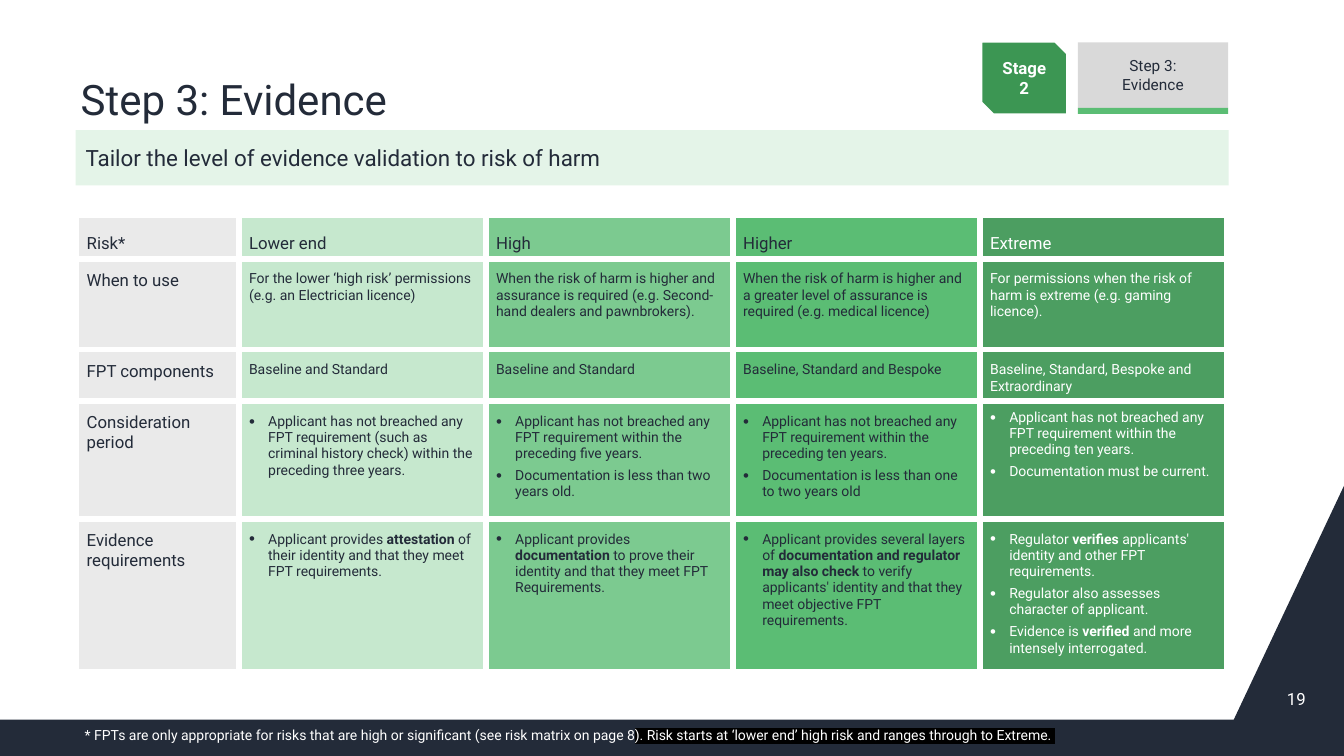
from lxml.etree import SubElement
from pptx import Presentation
from pptx.dml.color import RGBColor
from pptx.enum.shapes import MSO_SHAPE as SHAPE
from pptx.enum.text import MSO_ANCHOR as ANCHOR, PP_ALIGN as ALIGN
from pptx.oxml.ns import qn
from pptx.util import Inches, Pt

WIDTH, HEIGHT = Inches(13.33), Inches(7.5)
FONT = "Roboto"
NAVY = RGBColor(0x23, 0x2B, 0x39)
WHITE = RGBColor(0xFF, 0xFF, 0xFF)
BLACK = RGBColor(0x00, 0x00, 0x00)
PALE_GREEN = RGBColor(0xE4, 0xF4, 0xE8)
STAGE_GREEN = RGBColor(0x3C, 0x96, 0x53)
STEP_GREY = RGBColor(0xD9, 0xD9, 0xD9)
LABEL_GREY = RGBColor(0xEA, 0xEA, 0xEA)
LOWER_GREEN = RGBColor(0xC6, 0xE8, 0xCE)
HIGH_GREEN = RGBColor(0x7C, 0xCA, 0x90)
HIGHER_GREEN = RGBColor(0x5B, 0xBD, 0x74)
EXTREME_GREEN = RGBColor(0x4C, 0x9E, 0x61)

COLUMN_FILLS = [LABEL_GREY, LOWER_GREEN, HIGH_GREEN, HIGHER_GREEN, EXTREME_GREEN]
COLUMN_SHARES = [12.08] + [18.38] * 4
ROW_SHARES = [5.73, 12, 6.8, 15.6, 20.27]

# Lists become bullets; ** marks bold words.
RISK_ROWS = [
    ["Risk*", "Lower end", "High", "Higher", "Extreme"],
    ["When to use",
     "For the lower ‘high risk’ permissions (e.g. an Electrician licence)",
     "When the risk of harm is higher and assurance is required "
     "(e.g. Second-hand dealers and pawnbrokers).",
     "When the risk of harm is higher and a greater level of assurance is "
     "required (e.g. medical licence)",
     "For permissions when the risk of harm is extreme (e.g. gaming licence)."],
    ["FPT components", "Baseline and Standard", "Baseline and Standard",
     "Baseline, Standard and Bespoke",
     "Baseline, Standard, Bespoke and Extraordinary"],
    ["Consideration period",
     ["Applicant has not breached any FPT requirement (such as criminal "
      "history check) within the preceding three years."],
     ["Applicant has not breached any FPT requirement within the preceding five years.",
      "Documentation is less than two years old."],
     ["Applicant has not breached any FPT requirement within the preceding ten years.",
      "Documentation is less than one to two years old"],
     ["Applicant has not breached any FPT requirement within the preceding ten years.",
      "Documentation must be current."]],
    ["Evidence requirements",
     ["Applicant provides **attestation** of their identity and that they "
      "meet FPT requirements."],
     ["Applicant provides **documentation** to prove their identity and that "
      "they meet FPT Requirements."],
     ["Applicant provides several layers of **documentation and regulator may "
      "also check **to verify applicants' identity and that they meet "
      "objective FPT requirements."],
     ["Regulator **verifies **applicants' identity and other FPT requirements.",
      "Regulator also assesses character of applicant.",
      "Evidence is **verified** and more intensely interrogated."]],
]


def across(share):
    return round(WIDTH * share / 100)


def down(share):
    return round(HEIGHT * share / 100)


def place(left, top, width, height):
    """Turn percentages of the slide into a position and a size."""
    return across(left), down(top), across(width), down(height)


def add_run(paragraph, text, size, color, bold=False):
    run = paragraph.add_run()
    run.text = text
    run.font.name, run.font.size, run.font.bold = FONT, Pt(size), bold
    run.font.color.rgb = color
    return run


def highlight(run, color):
    properties = run.font._element
    mark = SubElement(properties, qn("a:highlight"))
    SubElement(mark, qn("a:srgbClr"), val=str(color))
    properties.find(qn("a:latin")).addprevious(mark)


def add_text(slide, area, anchor=ANCHOR.TOP):
    """Add a wrapped text box and return its frame."""
    frame = slide.shapes.add_textbox(*place(*area)).text_frame
    frame.word_wrap = True
    frame.vertical_anchor = anchor
    return frame


def add_block(slide, area, fill, kind=SHAPE.RECTANGLE):
    block = slide.shapes.add_shape(kind, *place(*area))
    block.shadow.inherit = False
    block.fill.solid()
    block.fill.fore_color.rgb = fill
    block.line.fill.background()
    block.text_frame.word_wrap = True
    block.text_frame.vertical_anchor = ANCHOR.MIDDLE
    return block


def add_footer_band(slide):
    corners = [(91.8, 95.2), (0, 95.2), (0, 100), (100, 100), (100, 64.27)]
    points = [(across(x), down(y)) for x, y in corners]
    builder = slide.shapes.build_freeform(*points[0])
    builder.add_line_segments(points[1:], close=True)
    band = builder.convert_to_shape()
    band.shadow.inherit = False
    band.fill.solid()
    band.fill.fore_color.rgb = NAVY
    band.line.fill.background()


def add_heading(slide):
    title = add_text(slide, (5.7, 2.13, 85.75, 15.07), ANCHOR.BOTTOM)
    title.margin_left = title.margin_right = Inches(0.04)
    title.paragraphs[0].line_spacing = 0.9
    add_run(title.paragraphs[0], "Step 3: Evidence", 30, NAVY)

    banner = add_block(slide, (5.63, 17.2, 85.8, 7.33), PALE_GREEN)
    message = banner.text_frame.paragraphs[0]
    message.alignment = ALIGN.LEFT
    message.space_before = message.space_after = Pt(2)
    add_run(message, "Tailor the level of evidence validation to risk of harm", 16, NAVY)


def add_stage_marker(slide):
    stage = add_block(slide, (72.99, 5.47, 6.45, 9.73), STAGE_GREEN,
                      SHAPE.SNIP_2_DIAG_RECTANGLE)
    stage.line.color.rgb = WHITE
    stage.line.width = Pt(2)
    stage_label = stage.text_frame.paragraphs[0]
    stage_label.alignment = ALIGN.CENTER
    add_run(stage_label, "Stage 2", 12, WHITE, bold=True)

    step = add_block(slide, (80.2, 5.6, 11.18, 8.67), STEP_GREY)
    step_label = step.text_frame.paragraphs[0]
    step_label.alignment = ALIGN.CENTER
    add_run(step_label, "Step 3:", 11, NAVY)
    step_label.add_line_break()
    add_run(step_label, "Evidence", 11, NAVY)
    add_block(slide, (80.2, 14.27, 11.18, 0.8), HIGHER_GREEN)


def add_bullet(paragraph):
    properties = paragraph._p.get_or_add_pPr()
    properties.set("marL", str(Inches(0.19)))
    properties.set("indent", str(-Inches(0.19)))
    SubElement(properties, qn("a:buSzPct"), val="120000")
    SubElement(properties, qn("a:buFont"), typeface="Arial")
    SubElement(properties, qn("a:buChar"), char="•")


def add_borders(cell):
    properties = cell._tc.get_or_add_tcPr()
    for side in ("lnL", "lnR", "lnT", "lnB"):
        border = SubElement(properties, qn(f"a:{side}"), w=str(Pt(4.5)))
        paint = SubElement(border, qn("a:solidFill"))
        SubElement(paint, qn("a:srgbClr"), val=str(WHITE))


def fill_cell(cell, content, size, color, fill):
    add_borders(cell)
    cell.fill.solid()
    cell.fill.fore_color.rgb = fill
    bulleted = isinstance(content, list)
    entries = content if bulleted else [content]
    for number, entry in enumerate(entries):
        frame = cell.text_frame
        paragraph = frame.add_paragraph() if number else frame.paragraphs[0]
        if len(entries) > 1:
            paragraph.space_before = paragraph.space_after = Pt(2)
        if bulleted:
            add_bullet(paragraph)
        for part, words in enumerate(entry.split("**")):
            add_run(paragraph, words, size, color, bold=part % 2 == 1)


def add_risk_table(slide):
    area = place(5.7, 28.53, sum(COLUMN_SHARES), sum(ROW_SHARES))
    table = slide.shapes.add_table(len(ROW_SHARES), len(COLUMN_SHARES), *area).table
    table.first_row = table.horz_banding = False
    for column, share in zip(table.columns, COLUMN_SHARES):
        column.width = across(share)
    for r, (contents, share) in enumerate(zip(RISK_ROWS, ROW_SHARES)):
        table.rows[r].height = down(share)
        for c, (content, fill) in enumerate(zip(contents, COLUMN_FILLS)):
            cell = table.cell(r, c)
            size = 12 if r == 0 or c == 0 else 10
            color = WHITE if fill == EXTREME_GREEN else NAVY
            fill_cell(cell, content, size, color, fill)
            if r == 0:
                cell.vertical_anchor = ANCHOR.BOTTOM
            else:
                cell.margin_top = Inches(0.12)
    current_documents = table.cell(3, 4)
    current_documents.margin_top = current_documents.margin_bottom = Inches(0.08)


def add_footer_text(slide):
    number = add_text(slide, (94.3, 89.73, 3.6, 5.33), ANCHOR.MIDDLE).paragraphs[0]
    number.alignment = ALIGN.RIGHT
    add_run(number, "19", 12, WHITE)

    footnote = add_text(slide, (5.18, 95.47, 90.32, 3.6))
    footnote.margin_left = Inches(0.15)
    line = footnote.paragraphs[0]
    add_run(line, "* FPTs are only appropriate for risks that are high or "
                  "significant (see risk matrix on page 8", 10, WHITE)
    highlight(add_run(line, "). Risk starts at ‘lower end’ high risk and ranges "
                            "through to Extreme. ", 10, WHITE), BLACK)


def main():
    deck = Presentation()
    deck.slide_width, deck.slide_height = WIDTH, HEIGHT
    slide = deck.slides.add_slide(deck.slide_layouts[6])
    add_footer_band(slide)
    add_heading(slide)
    add_stage_marker(slide)
    add_risk_table(slide)
    add_footer_text(slide)
    deck.save("out.pptx")


if __name__ == "__main__":
    main()
